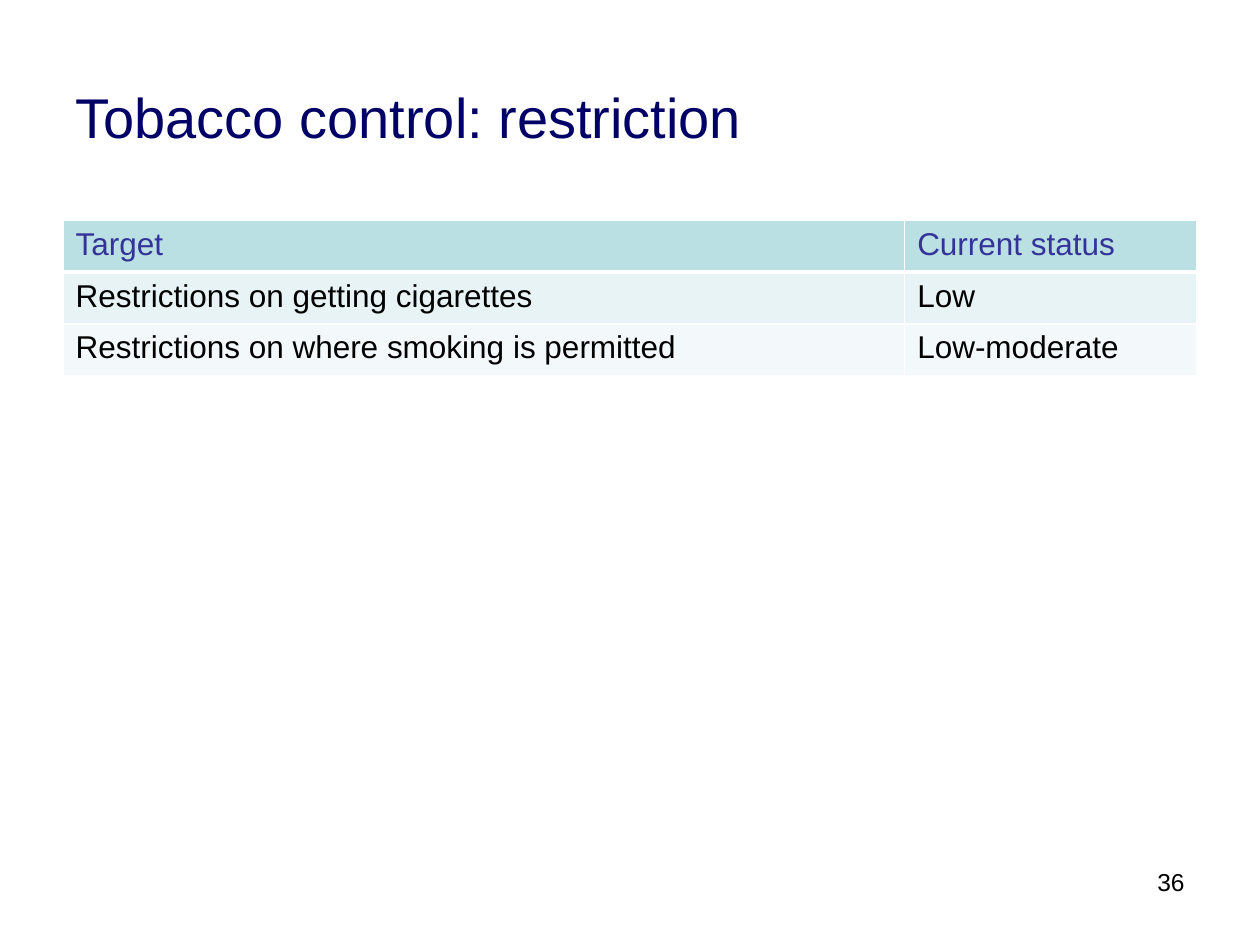
from pptx import Presentation
from pptx.dml.color import RGBColor as RGB
from pptx.enum.text import MSO_ANCHOR as Anchor, PP_ALIGN as Align
from pptx.oxml.ns import qn
from pptx.util import Inches, Pt
from lxml.etree import SubElement

FONT = "Arial"
COLORS = {
    "title": "000066",
    "heading": "333399",
    "body": "000000",
    "border": "FFFFFF",
    "head_row": "BBE0E3",
    "odd_row": "E7F3F4",
    "even_row": "F3F9FA",
}
SLIDE_W, SLIDE_H = 10, 7.5
MARGIN = 0.05 * SLIDE_W
COLUMN_WIDTHS = (6.68, 2.32)
ROW_HEIGHT = 0.41
ROWS = (
    ("Target", "Current status"),
    ("Restrictions on getting cigarettes", "Low"),
    ("Restrictions on where smoking is permitted", "Low-moderate"),
)


def write(frame, text, size, color, align=Align.LEFT):
    frame.text = text
    paragraph = frame.paragraphs[0]
    paragraph.alignment = align
    font = paragraph.runs[0].font
    font.name, font.size, font.bold = FONT, Pt(size), False
    font.color.rgb = RGB.from_string(COLORS[color])


def add_label(slide, box, text, size, color, align=Align.LEFT, anchor=Anchor.TOP):
    frame = slide.shapes.add_textbox(*map(Inches, box)).text_frame
    frame.word_wrap = True
    frame.vertical_anchor = anchor
    write(frame, text, size, color, align)


def set_borders(cell, bottom_width):
    props = cell._tc.get_or_add_tcPr()
    widths = {"a:lnL": 1, "a:lnR": 1, "a:lnT": 1, "a:lnB": bottom_width}
    for position, (side, width) in enumerate(widths.items()):
        line = SubElement(props, qn(side), w=str(Pt(width)))
        fill = SubElement(line, qn("a:solidFill"))
        SubElement(fill, qn("a:srgbClr"), val=COLORS["border"])
        props.insert(position, line)  # borders come before the cell fill


def add_status_table(slide, left, top):
    table = slide.shapes.add_table(
        len(ROWS), len(COLUMN_WIDTHS), Inches(left), Inches(top),
        Inches(sum(COLUMN_WIDTHS)), Inches(ROW_HEIGHT * len(ROWS))).table
    for column, width in zip(table.columns, COLUMN_WIDTHS):
        column.width = Inches(width)
    for r, texts in enumerate(ROWS):
        table.rows[r].height = Inches(ROW_HEIGHT)
        is_head = r == 0
        band = "head_row" if is_head else "odd_row" if r % 2 else "even_row"
        for c, text in enumerate(texts):
            cell = table.cell(r, c)
            cell.fill.solid()
            cell.fill.fore_color.rgb = RGB.from_string(COLORS[band])
            set_borders(cell, 3 if is_head else 1)
            write(cell.text_frame, text, 18, "heading" if is_head else "body")


def main():
    deck = Presentation()
    deck.slide_width, deck.slide_height = Inches(SLIDE_W), Inches(SLIDE_H)
    slide = deck.slides.add_slide(deck.slide_layouts[6])

    # Title
    add_label(slide, (MARGIN, 0.04 * SLIDE_H, 8.97, 1.25),
              "Tobacco control: restriction", 32, "title", anchor=Anchor.MIDDLE)

    # Targets and their status
    add_status_table(slide, MARGIN, 1.75)

    # Page number, flush with the right margin
    number_width = 2.77
    add_label(slide, (SLIDE_W - MARGIN - number_width, 6.83, number_width, 0.52),
              "36", 14, "body", align=Align.RIGHT)

    deck.save("out.pptx")


if __name__ == "__main__":
    main()
